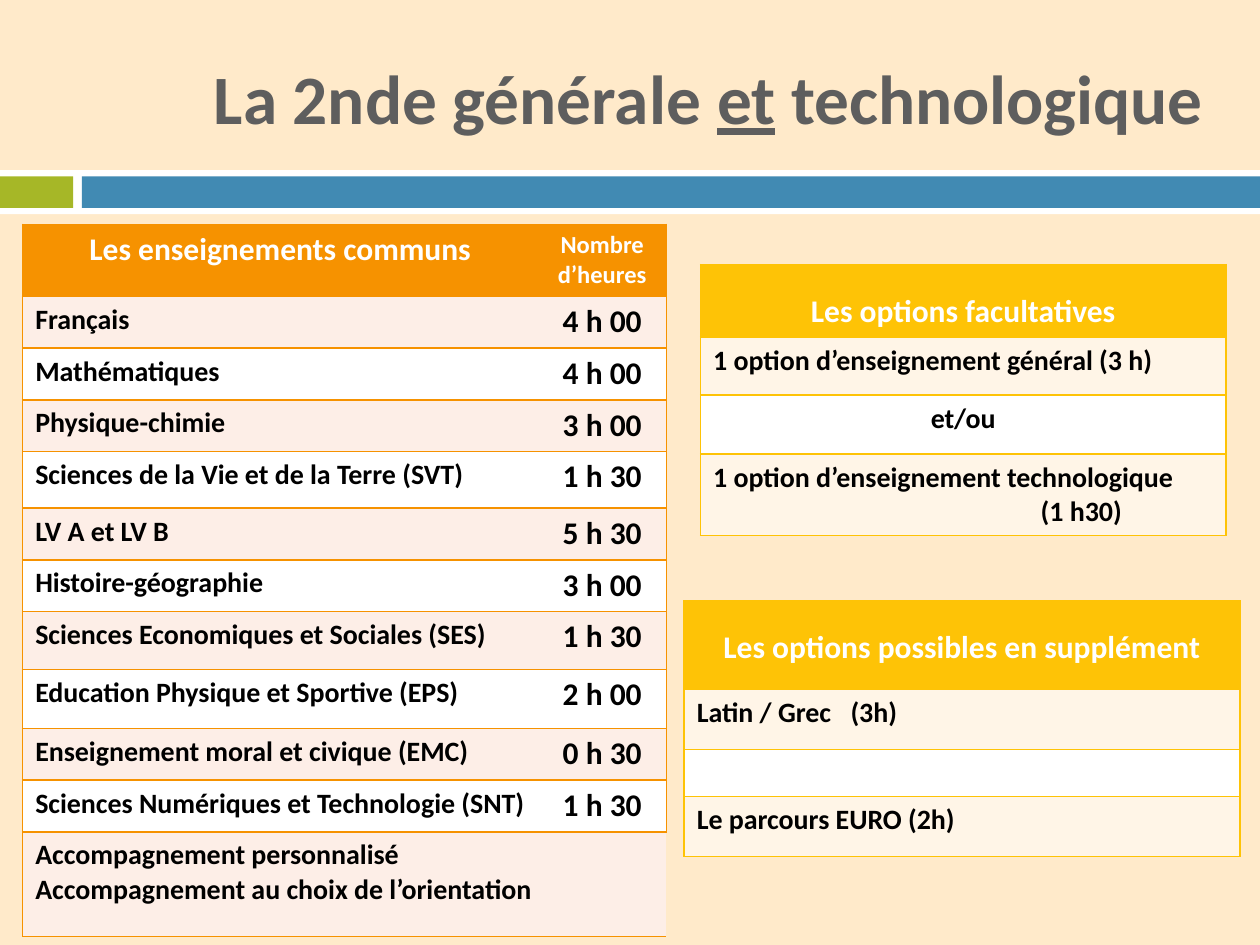
from lxml import etree
from pptx import Presentation
from pptx.dml.color import RGBColor as RGB
from pptx.enum.shapes import MSO_SHAPE as SHAPE
from pptx.enum.text import MSO_ANCHOR as ANCHOR, MSO_AUTO_SIZE as AUTO, PP_ALIGN as ALIGN
from pptx.oxml import parse_xml
from pptx.oxml.ns import nsdecls, qn
from pptx.util import Inches, Pt

HUES = {
    "cream": "FFEACA", "white": "FFFFFF", "green": "A6B727", "blue": "418AB3",
    "gray": "5E5E5E", "black": "000000", "orange": "F69200", "peach": "FDEEE7",
    "gold": "FEC306", "ivory": "FFF5E7",
}


def add_run(para, text, size, hue):
    run = para.add_run()
    run.text = text
    font = run.font
    font.name, font.size, font.bold = "Calibri", Pt(size), True
    font.color.rgb = RGB.from_string(HUES[hue])
    return run


def add_grid(left, top, cols, rows, head, pale):
    width, height = Inches(sum(cols)), Inches(sum(rows))
    grid = slide.shapes.add_table(
        len(rows), len(cols), Inches(left), Inches(top), width, height).table
    for col, size in zip(grid.columns, cols):
        col.width = Inches(size)
    for row, size in zip(grid.rows, rows):
        row.height = Inches(size)
    for r in range(len(rows)):
        for c in range(len(cols)):
            cell = grid.cell(r, c)
            props = cell._tc.get_or_add_tcPr()
            inner = {"L": c > 0, "R": c < len(cols) - 1, "T": False, "B": False}
            for side, blank in inner.items():
                paint = "<a:noFill/>" if blank else (
                    f'<a:solidFill><a:srgbClr val="{HUES[head]}"/></a:solidFill>')
                props.append(parse_xml(
                    f'<a:ln{side} {nsdecls("a")} w="12700">{paint}</a:ln{side}>'))
            cell.fill.solid()
            hue = head if r == 0 else pale if r % 2 else "white"
            cell.fill.fore_color.rgb = RGB.from_string(HUES[hue])
    return grid


deck = Presentation()
deck.slide_width, deck.slide_height = Inches(10), Inches(7.5)
slide = deck.slides.add_slide(deck.slide_layouts[5])
slide.background.fill.solid()
slide.background.fill.fore_color.rgb = RGB.from_string(HUES["cream"])

bands = [(0, 1.35, 10, 0.35, "white"), (0, 1.4, 0.58, 0.25, "green"),
         (0.65, 1.4, 9.35, 0.25, "blue")]
for left, top, width, height, hue in bands:
    band = slide.shapes.add_shape(
        SHAPE.RECTANGLE, Inches(left), Inches(top), Inches(width), Inches(height))
    band.shadow.inherit = False
    band.fill.solid()
    band.fill.fore_color.rgb = RGB.from_string(HUES[hue])
    band.line.fill.background()

title = slide.shapes.title
title.left, title.top = Inches(1.61), Inches(0.52)
title.width, title.height = Inches(8.46), Inches(1.08)
frame = title.text_frame
frame.auto_size, frame.vertical_anchor = AUTO.NONE, ANCHOR.MIDDLE
frame.margin_top, frame.margin_bottom = Inches(0.04), Inches(0.62)
frame.margin_left, frame.margin_right = Inches(0), Inches(0.52)
para = frame.paragraphs[0]
para.alignment = ALIGN.RIGHT
for text, under in [("La 2nde générale ", False), ("et", True), (" technologique", False)]:
    add_run(para, text, 39.6, "gray").font.underline = under

courses = [
    ("Français", "4 h 00"),
    ("Mathématiques", "4 h 00"),
    ("Physique-chimie", "3 h 00"),
    ("Sciences de la Vie et de la Terre (SVT)", "1 h 30"),
    ("LV A et LV B", "5 h 30"),
    ("Histoire-géographie", "3 h 00"),
    ("Sciences Economiques et Sociales (SES)", "1 h 30"),
    ("Education Physique et Sportive (EPS)", "2 h 00"),
    ("Enseignement moral et civique (EMC)", "0 h 30"),
    ("Sciences Numériques et Technologie (SNT)", "1 h 30"),
]
rows = [0.57, 0.41, 0.41, 0.41, 0.45, 0.41, 0.41, 0.46, 0.47, 0.41, 0.41, 0.83]
common = add_grid(0.18, 1.78, [4.09, 1.02], rows, "orange", "peach")
for c, (text, size) in enumerate([("Les enseignements communs", 18), ("Nombre d’heures", 14)]):
    para = common.cell(0, c).text_frame.paragraphs[0]
    para.alignment = ALIGN.CENTER
    add_run(para, text, size, "white")
for r, (course, hours) in enumerate(courses, 1):
    add_run(common.cell(r, 0).text_frame.paragraphs[0], course, 16, "black")
    para = common.cell(r, 1).text_frame.paragraphs[0]
    para.alignment = ALIGN.CENTER
    add_run(para, hours, 18, "black")
last = common.cell(11, 0)
last.merge(common.cell(11, 1))
frame = last.text_frame
add_run(frame.paragraphs[0], "Accompagnement personnalisé", 16, "black")
add_run(frame.add_paragraph(), "Accompagnement au choix de l’orientation", 16, "black")

choice = add_grid(5.56, 2.1, [4.17], [0.57, 0.46, 0.47, 0.64], "gold", "ivory")
extra = add_grid(5.43, 4.77, [4.41], [0.7, 0.48, 0.37, 0.48], "gold", "ivory")
heads = [(choice, "Les options facultatives"), (extra, "Les options possibles en supplément")]
for grid, text in heads:
    cell = grid.cell(0, 0)
    cell.margin_top = Inches(0.22)
    para = cell.text_frame.paragraphs[0]
    para.alignment = ALIGN.CENTER
    add_run(para, text, 18, "white")

lines = [
    (choice, 1, "1 option d’enseignement général (3 h)"),
    (choice, 2, "et/ou"),
    (choice, 3, "1 option d’enseignement technologique"),
    (extra, 1, "Latin / Grec\t(3h)"),
    (extra, 3, "Le parcours EURO (2h)"),
]
for grid, r, text in lines:
    para = grid.cell(r, 0).text_frame.paragraphs[0]
    if "\t" in text:
        tabs = etree.SubElement(para._p.get_or_add_pPr(), qn("a:tabLst"))
        etree.SubElement(tabs, qn("a:tab"), pos=str(Inches(1.22)), algn="l")
    add_run(para, text, 16, "black")
choice.cell(2, 0).text_frame.paragraphs[0].alignment = ALIGN.CENTER
para = choice.cell(3, 0).text_frame.add_paragraph()
para._p.get_or_add_pPr().set("marL", str(Inches(2.6)))
add_run(para, "(1 h30)", 16, "black")
blank = extra.cell(2, 0)
blank.margin_top = blank.margin_bottom = Inches(0)

deck.save("out.pptx")
